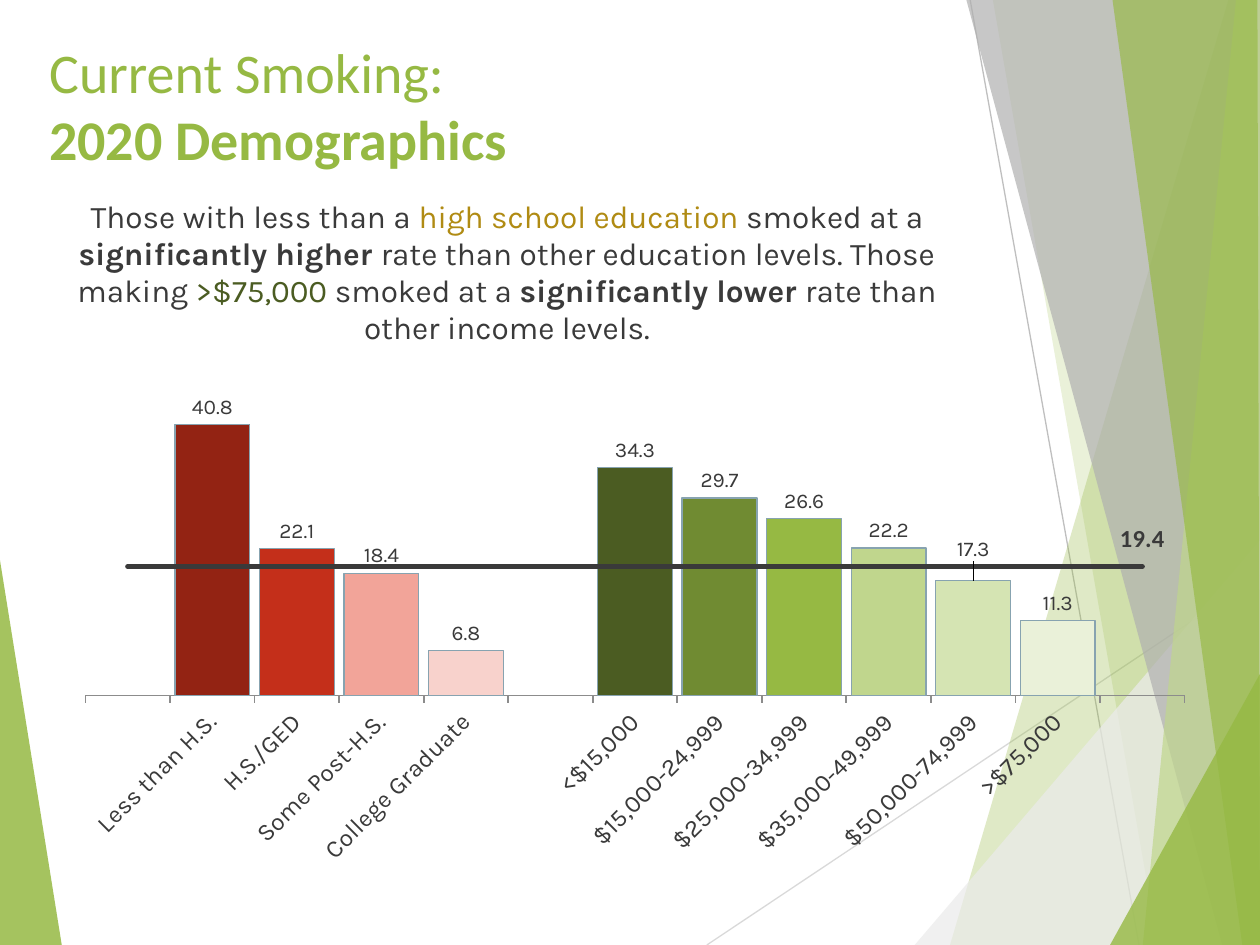
from dataclasses import dataclass

from lxml.etree import SubElement
from pptx import Presentation
from pptx.chart.data import CategoryChartData
from pptx.dml.color import RGBColor
from pptx.enum.chart import (XL_CHART_TYPE, XL_LABEL_POSITION,
                             XL_MARKER_STYLE, XL_TICK_MARK)
from pptx.enum.shapes import MSO_CONNECTOR
from pptx.enum.text import MSO_ANCHOR, MSO_AUTO_SIZE, PP_ALIGN
from pptx.oxml.ns import qn
from pptx.util import Inches, Pt


@dataclass(frozen=True)
class Theme:
    width: float = 10
    height: float = 7.5
    head_font: str = "Calibri"
    body_font: str = "Karla"
    green: str = "96B943"
    pale_green: str = "C0D68D"
    dark_green: str = "4B5C22"
    gold: str = "B08B13"
    ink: str = "3A3A3A"
    gray: str = "B0B0B0"
    mist: str = "EBEBEB"
    axis: str = "8C8C8C"
    outline: str = "87A3B0"
    title_size: int = 32
    message_size: int = 18
    axis_size: int = 14
    label_size: int = 12


THEME = Theme()

# Corners in percent of the slide: (colour, opacity, points)
LEFT_WEDGE = (THEME.green, 85, [(0, 59.3), (4.9, 100), (0, 100)])
RIGHT_BANDS = [
    (THEME.green, 30, [(97.5, 0), (75.4, 100), (100, 100), (100, 0)]),
    (THEME.green, 20, [(78.8, 0), (91.9, 100), (100, 100), (100, 0)]),
    (THEME.mist, 72, [(72.6, 100), (100, 57.2), (100, 100)]),
    (THEME.gray, 70, [(76.7, 0), (97, 100), (100, 100), (100, 0)]),
    (THEME.pale_green, 70, [(98.1, 0), (90.7, 100), (100, 100), (100, 0)]),
    (THEME.green, 65, [(88.3, 0), (98.6, 100), (100, 100), (99.8, 0)]),
    (THEME.green, 80, [(88.1, 100), (100, 71.3), (100, 100)]),
]
RAYS = [("D9D9D9", (56.1, 100), (100, 60.9)), ("BFBFBF", (77, 0), (90.4, 100))]

# Category, rate, bar colour
RATES = [
    ("", None, None),
    ("Less than H.S.", 40.8, "932313"),
    ("H.S./GED", 22.1, "C42F1A"),
    ("Some Post-H.S.", 18.4, "F2A499"),
    ("College Graduate", 6.8, "F8D2CC"),
    ("", None, None),
    ("<$15,000", 34.3, THEME.dark_green),
    ("$15,000-24,999", 29.7, "708B32"),
    ("$25,000-34,999", 26.6, THEME.green),
    ("$35,000-49,999", 22.2, THEME.pale_green),
    ("$50,000-74,999", 17.3, "D5E4B3"),
    (">$75,000", 11.3, "EAF1D9"),
    ("", None, None),
]
AVERAGE = 19.4
RAISED_BAR = 10  # its label would touch the average line

# Text, colour, bold
MESSAGE = [
    ("Those with less than a ", THEME.ink, False),
    ("high school education", THEME.gold, False),
    (" smoked at a ", THEME.ink, False),
    ("significantly higher", THEME.ink, True),
    (" rate than other education levels. Those making ", THEME.ink, False),
    (">$75,000", THEME.dark_green, False),
    (" smoked at a ", THEME.ink, False),
    ("significantly lower", THEME.ink, True),
    (" rate than other income levels.", THEME.ink, False),
]


def across(percent):
    return Inches(THEME.width * percent / 100)


def down(percent):
    return Inches(THEME.height * percent / 100)


def set_values(target, values):
    for name, value in values.items():
        setattr(target, name, value)


def set_font(font, color=THEME.ink, **values):
    set_values(font, values)
    font.color.rgb = RGBColor.from_string(color)


def set_fill(fill, color):
    fill.solid()
    fill.fore_color.rgb = RGBColor.from_string(color)


def set_line(line, color, points):
    line.color.rgb = RGBColor.from_string(color)
    line.width = Pt(points)


def add_band(page, color, opacity, points):
    corners = [(across(x), down(y)) for x, y in points]
    builder = page.shapes.build_freeform(*corners[0])
    builder.add_line_segments(corners[1:], close=True)
    band = builder.convert_to_shape()
    band.shadow.inherit = False
    set_fill(band.fill, color)
    band.line.fill.background()
    tint = next(band._element.spPr.iter(qn("a:srgbClr")))
    SubElement(tint, qn("a:alpha"), val=str(opacity * 1000))


def add_ray(page, color, start, end):
    ray = page.shapes.add_connector(
        MSO_CONNECTOR.STRAIGHT, across(start[0]), down(start[1]), across(end[0]), down(end[1]))
    set_line(ray.line, color, 0.75)
    SubElement(ray._element.spPr, qn("a:effectLst"))


def write_title(page):
    title = page.shapes.title
    page.shapes._spTree.append(title._element)  # bring above the bands
    set_values(title, {"left": across(2.9), "top": down(3.33),
                       "width": across(96.3), "height": down(17.2)})
    frame = title.text_frame
    set_values(frame, {"auto_size": MSO_AUTO_SIZE.NONE, "word_wrap": True,
                       "vertical_anchor": MSO_ANCHOR.TOP})
    para = frame.paragraphs[0]
    para.alignment = PP_ALIGN.LEFT
    for text, bold in (("Current Smoking:", False), ("2020 Demographics", True)):
        if para.runs:
            para.add_line_break()
        span = para.add_run()
        span.text = text
        set_font(span.font, THEME.green, name=THEME.head_font, size=Pt(THEME.title_size), bold=bold)


def set_layout(parent, position, **values):
    """Place a chart part by hand, in shares of the chart's size."""
    for old in parent.findall(qn("c:layout")):
        parent.remove(old)
    layout = SubElement(parent, qn("c:layout"))
    manual = SubElement(layout, qn("c:manualLayout"))
    for name, value in values.items():
        SubElement(manual, qn(f"c:{name}"), val=str(value))
    parent.insert(position, layout)


def write_message(chart):
    title = chart.chart_title
    para = title.text_frame.paragraphs[0]
    para.alignment = PP_ALIGN.CENTER
    for text, color, bold in MESSAGE:
        span = para.add_run()
        span.text = text
        set_font(span.font, color, name=THEME.body_font, size=Pt(THEME.message_size), bold=bold)
    set_layout(title._element, 1, xMode="edge", yMode="edge", x=0.04, y=0.03)


def move_to_line_plot(chart):
    """Turn the second bar series into a line on the same axes."""
    bars = chart.plots[0]._element
    series = bars.findall(qn("c:ser"))[1]
    for child in series.findall(qn("c:invertIfNegative")):
        series.remove(child)
    line_plot = SubElement(bars.getparent(), qn("c:lineChart"))
    SubElement(line_plot, qn("c:grouping"), val="standard")
    SubElement(line_plot, qn("c:varyColors"), val="0")
    line_plot.append(series)
    SubElement(line_plot, qn("c:marker"), val="1")
    for axis in bars.findall(qn("c:axId")):
        SubElement(line_plot, qn("c:axId"), val=axis.get("val"))
    bars.addnext(line_plot)


def raise_label(point, position, share, **font):
    label = point.data_label
    set_font(label.font, **font)
    label.position = position
    set_layout(label._get_or_add_dLbl(), 1, x=0, y=-share)


def format_bars(plot):
    plot.gap_width = 13
    plot.vary_by_categories = False
    series = plot.series[0]
    set_fill(series.format.fill, THEME.mist)
    set_line(series.format.line, THEME.outline, 0.75)
    for index, (_, rate, color) in enumerate(RATES):
        if rate is not None:
            bar = series.points[index].format
            set_fill(bar.fill, color)
            set_line(bar.line, THEME.outline, 0.75)
    labels = series.data_labels
    set_values(labels, {"show_value": True, "number_format": "0.0",
                        "number_format_is_linked": False,
                        "position": XL_LABEL_POSITION.OUTSIDE_END})
    font = {"name": THEME.body_font, "size": Pt(THEME.label_size)}
    set_font(labels.font, **font)
    raise_label(series.points[RAISED_BAR], XL_LABEL_POSITION.OUTSIDE_END, 0.02, **font)


def format_average(series):
    series.smooth = False
    series.marker.style = XL_MARKER_STYLE.NONE
    set_line(series.format.line, THEME.ink, 3)
    series.format.line._ln.set("cap", "rnd")
    series.data_labels.show_value = False
    raise_label(series.points[len(RATES) - 1], XL_LABEL_POSITION.ABOVE, 0.01,
                name=THEME.head_font, size=Pt(THEME.axis_size), bold=True)


def format_axes(chart):
    set_values(chart.value_axis, {"visible": False, "minimum_scale": 0, "maximum_scale": 50,
                                  "major_unit": 10, "has_major_gridlines": False})
    groups = chart.category_axis
    groups.major_tick_mark = XL_TICK_MARK.OUTSIDE
    set_line(groups.format.line, THEME.axis, 1)
    set_font(groups.tick_labels.font, name=THEME.body_font, size=Pt(THEME.axis_size))
    groups._element.find(qn("c:txPr")).find(qn("a:bodyPr")).set("rot", "-2700000")


def add_rate_chart(page):
    data = CategoryChartData()
    data.categories = [name for name, _, _ in RATES]
    data.add_series("Series 1", [rate for _, rate, _ in RATES])
    data.add_series("Series 2", [AVERAGE] * len(RATES))
    chart = page.shapes.add_chart(XL_CHART_TYPE.COLUMN_CLUSTERED, across(2.1), down(18.25),
                                  across(93.8), down(74.8), data).chart
    chart.has_legend = False
    set_font(chart.font, name=THEME.head_font, size=Pt(10))
    write_message(chart)
    move_to_line_plot(chart)
    format_bars(chart.plots[0])
    format_average(chart.plots[1].series[0])
    format_axes(chart)
    set_layout(chart.plots[0]._element.getparent(), 0, layoutTarget="inner", xMode="edge",
               yMode="edge", x=0.05, y=0.27, w=0.93, h=0.47)


def main():
    deck = Presentation()
    deck.slide_width, deck.slide_height = Inches(THEME.width), Inches(THEME.height)
    page = deck.slides.add_slide(deck.slide_layouts[5])
    # Background decoration
    add_band(page, *LEFT_WEDGE)
    for ray in RAYS:
        add_ray(page, *ray)
    for band in RIGHT_BANDS:
        add_band(page, *band)
    # Content
    write_title(page)
    add_rate_chart(page)
    deck.save("out.pptx")


if __name__ == "__main__":
    main()
